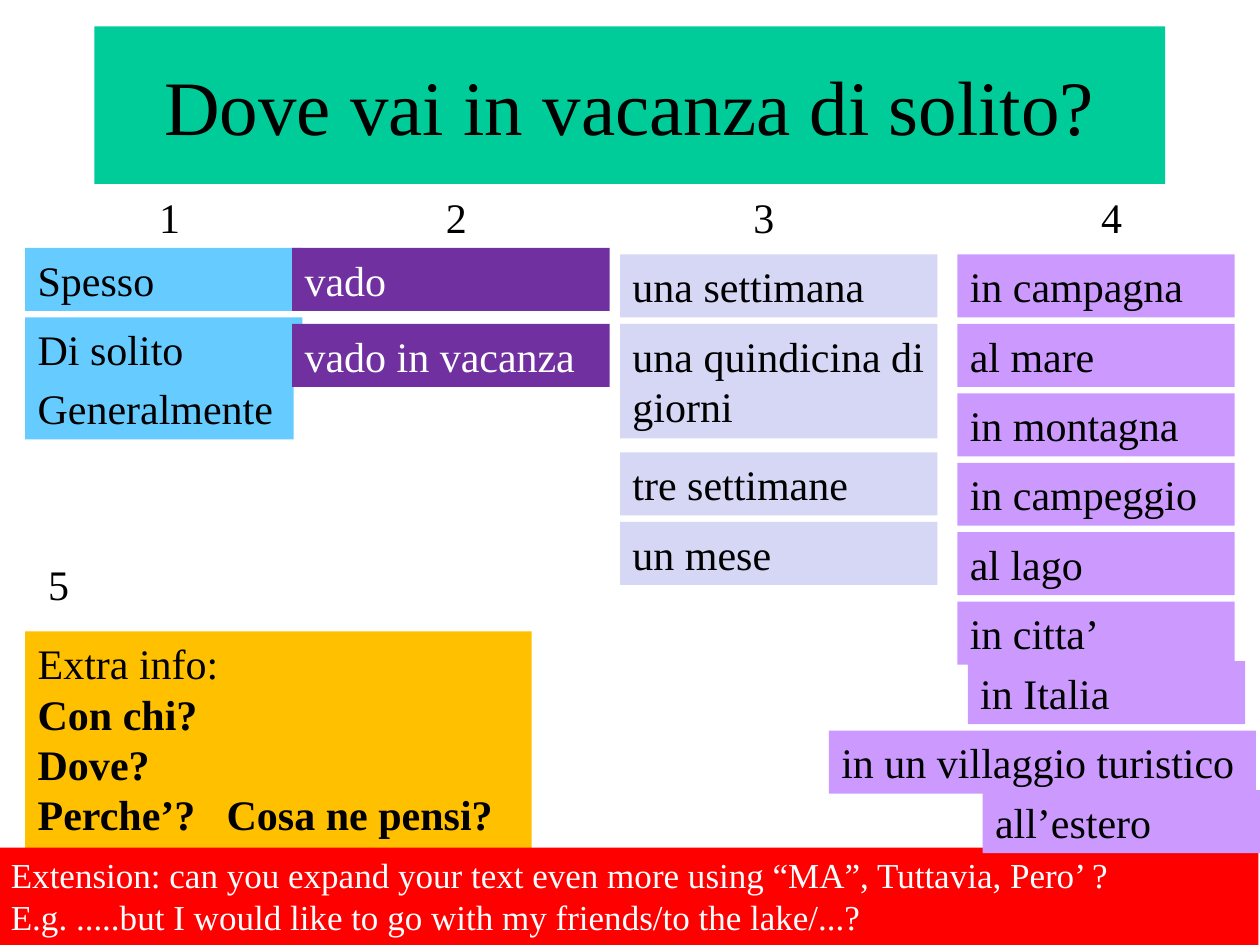
"""Build the Italian holiday sentence-builder slide."""
from dataclasses import dataclass

import pptx
import pptx.dml.color
import pptx.enum.text
import pptx.oxml
import pptx.oxml.ns
import pptx.slide
import pptx.text.text
import pptx.util
from pptx.util import Cm

FONT = "Times New Roman"
COLORS = {
    "black": "000000", "white": "FFFFFF", "title": "00CC99", "frequency": "66CCFF",
    "verb": "7030A0", "duration": "D6D6F5", "place": "CC99FF", "extra": "FFC000",
    "extension": "FF0000",
}
ROW_STEP = 1.4
ROW_HEIGHT = 1.27


@dataclass
class Card:
    text: str
    left: float
    top: float
    width: float
    fill: str = ""
    height: float = ROW_HEIGHT
    ink: str = "black"
    size: int = 24
    inset: float = 0.25


def color(name: str) -> pptx.dml.color.RGBColor:
    """Return the named colour."""
    return pptx.dml.color.RGBColor.from_string(COLORS[name])


def format_text(frame: pptx.text.text.TextFrame, size: int, ink: str) -> None:
    """Give every run the slide font, a size and a colour."""
    for para in frame.paragraphs:
        for span in para.runs:
            span.font.name = FONT
            span.font.size = pptx.util.Pt(size)
            span.font.color.rgb = color(ink)


def draw_card(page: pptx.slide.Slide, card: Card) -> pptx.text.text.TextFrame:
    """Draw one text card and return its text frame."""
    box = page.shapes.add_textbox(
        Cm(card.left), Cm(card.top), Cm(card.width), Cm(card.height))
    if card.fill:
        box.fill.solid()
        box.fill.fore_color.rgb = color(card.fill)
    frame = box.text_frame
    frame.word_wrap = True
    frame.auto_size = pptx.enum.text.MSO_AUTO_SIZE.SHAPE_TO_FIT_TEXT
    frame.margin_left = Cm(card.inset)
    frame.text = card.text
    format_text(frame, card.size, card.ink)
    return frame


def draw_title(page: pptx.slide.Slide, text: str) -> None:
    """Place and format the title."""
    title = page.shapes.title
    title.left, title.top, title.width, title.height = Cm(1.9), Cm(0.53), Cm(21.59), Cm(3.18)
    title.fill.solid()
    title.fill.fore_color.rgb = color("title")
    title.text_frame.text = text
    title.text_frame.vertical_anchor = pptx.enum.text.MSO_ANCHOR.MIDDLE
    title.text_frame.paragraphs[0].alignment = pptx.enum.text.PP_ALIGN.CENTER
    format_text(title.text_frame, 44, "black")


def add_tab_stop(para: pptx.text.text._Paragraph, position: float) -> None:
    """Add a left tab stop to a paragraph."""
    properties = para._p.get_or_add_pPr()
    tabs = pptx.oxml.parse_xml(
        f'<a:tabLst {pptx.oxml.ns.nsdecls("a")}><a:tab pos="{Cm(position)}" algn="l"/></a:tabLst>')
    properties.append(tabs)


def draw_extra_info(page: pptx.slide.Slide) -> None:
    """Draw the prompt box with its bold questions."""
    text = "Extra info:\nCon chi?\nDove?\nPerche’?\tCosa ne pensi?"
    frame = draw_card(page, Card(text, 0.51, 12.73, 10.21, "extra", 4.37))
    for para in frame.paragraphs[1:]:
        for span in para.runs:
            span.font.bold = True
    add_tab_stop(frame.paragraphs[-1], 3.81)


def main() -> None:
    """Build and save the deck."""
    deck = pptx.Presentation()
    deck.slide_width, deck.slide_height = Cm(25.4), Cm(19.05)
    page = deck.slides.add_slide(deck.slide_layouts[5])
    draw_title(page, "Dove vai in vacanza di solito?")

    numbers = [("1", 2.11, 3.73, 1.1), ("2", 8.1, 3.73, 0.89), ("3", 14.3, 3.73, 0.89),
               ("4", 21.31, 3.73, 0.89), ("5", 0.08, 11.13, 0.89)]
    cards = [Card(text, left, top, 2.2, inset=inset) for text, left, top, inset in numbers]
    cards += [
        Card("Spesso", 0.51, 5, 5.59, "frequency"),
        Card("Di solito", 0.51, 5 + ROW_STEP, 5.59, "frequency"),
        Card("Generalmente", 0.51, 7.59, 5.41, "frequency"),
        Card("vado", 5.89, 5, 6.4, "verb", ink="white"),
        Card("vado in vacanza", 5.89, 6.53, 6.4, "verb", ink="white"),
        Card("una settimana", 12.5, 5.13, 6.4, "duration"),
        Card("una quindicina di giorni", 12.5, 6.53, 6.4, "duration", 2.31),
        Card("tre settimane", 12.5, 9.12, 6.4, "duration"),
        Card("un mese", 12.5, 9.12 + ROW_STEP, 6.4, "duration"),
    ]
    places = ["in campagna", "al mare", "in montagna", "in campeggio", "al lago", "in citta’"]
    cards += [Card(place, 19.3, 5.13 + row * ROW_STEP, 5.59, "place")
              for row, place in enumerate(places)]
    extension = ("Extension: can you expand your text even more using “MA”, Tuttavia, Pero’ ?\v"
                 "E.g. .....but I would like to go with my friends/to the lake/...?")
    cards += [
        Card(extension, -0.03, 17.09, 25.4, "extension", 1.96, "white", 20),
        Card("in un villaggio turistico", 16.71, 14.73, 8.61, "place"),
        Card("in Italia", 19.51, 13.33, 5.59, "place"),
        Card("all’estero", 19.81, 15.93, 5.59, "place"),
    ]
    draw_extra_info(page)
    for card in cards:
        draw_card(page, card)
    deck.save("out.pptx")


if __name__ == "__main__":
    main()
